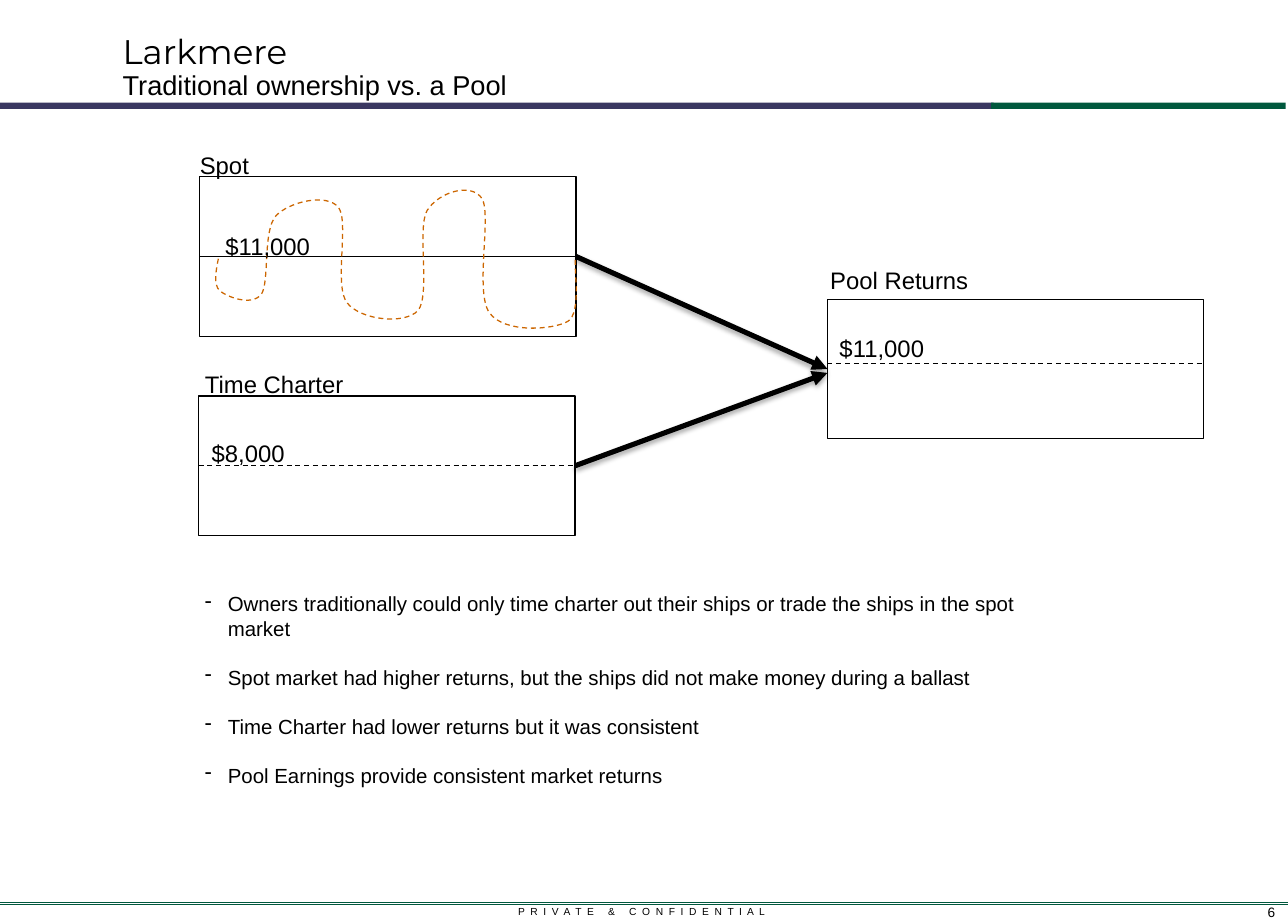
"""Build the slide that compares spot and time charter ownership with a pool."""
from dataclasses import dataclass, field
from itertools import chain

from lxml.etree import SubElement
from pptx import Presentation
from pptx.dml.color import RGBColor
from pptx.enum.dml import MSO_LINE_DASH_STYLE
from pptx.enum.shapes import MSO_CONNECTOR, MSO_SHAPE
from pptx.enum.text import MSO_ANCHOR, PP_ALIGN
from pptx.oxml.ns import qn
from pptx.util import Pt

BLACK, GREEN, NAVY, ORANGE = "000000", "00583D", "3A3761", "CC6600"
LEFT, RIGHT = 1, 3
PANEL_WIDTH = 221


@dataclass
class Run:
    text: str
    size: float
    font: str = "Arial"
    spacing: int = 0
    breaks: bool = False


@dataclass
class TextBox:
    left: float
    top: float
    width: float
    height: float
    lines: list[list[Run]]
    frame: dict = field(default_factory=dict)
    paragraph: dict = field(default_factory=dict)
    bullet: str = ""


@dataclass
class Panel:
    left: float
    top: float
    height: float


@dataclass
class Line:
    start: tuple[float, float]
    end: tuple[float, float]
    color: str = BLACK
    width: float = 0.75
    dashed: bool = False
    arrow: bool = False


def label(left: float, top: float, text: str) -> TextBox:
    """Describe a 14 point label."""
    return TextBox(left, top, 124.6, 24.5, [[Run(text, 14)]])


NO_MARGINS = dict.fromkeys(("margin_left", "margin_top", "margin_right", "margin_bottom"), 0)
BULLETS = (
    "Owners traditionally could only time charter out their ships or trade the ships in the spot market",
    "Spot market had higher returns, but the ships did not make money during a ballast",
    "Time Charter had lower returns but it was consistent",
    "Pool Earnings provide consistent market returns",
)
TEXT_BOXES = (
    TextBox(72, 20.7, 653.8, 59.8,
            [[Run("Larkmere", 20, "Montserrat", breaks=True), Run("Traditional ownership vs. a Pool", 16)]],
            NO_MARGINS, {"line_spacing": 0.9}),
    TextBox(296.2, 527.8, 160.6, 14.4,
            [[Run("P R I V A T E", 6, spacing=83), Run(" ", 6, spacing=583), Run("&", 6, spacing=83),
              Run(" ", 6, spacing=583), Run("C O N F I D E N T I A L", 6, spacing=83)]],
            {"word_wrap": False}, {"alignment": PP_ALIGN.CENTER}),
    TextBox(713.2, 520.6, 35.3, 19.4, [[Run("6", 8)]],
            NO_MARGINS | {"vertical_anchor": MSO_ANCHOR.BOTTOM}, {"alignment": PP_ALIGN.RIGHT}),
    label(125.3, 132.5, "$11,000"),
    label(117.2, 254.2, "$8,000"),
    label(485.7, 192.2, "$11,000"),
    label(110.2, 85, "Spot"),
    label(113.2, 213.5, "Time Charter"),
    label(480.2, 152.3, "Pool Returns"),
    TextBox(113.2, 343.4, 496.8, 152.6, [[Run(text, 12)] for text in BULLETS],
            paragraph={"space_before": Pt(14.4)}, bullet="-"),
)
BANDS = ((0, 583.2, NAVY), (581.8, 172.8, GREEN))
RATE_FRAME = {"left": Pt(126.7), "top": Pt(111.6), "width": Pt(211.7), "height": Pt(80.6)}
RATE_START = (128.2, 151.9)
RATE_CURVES = (
    ((126.7, 159.1), (125.3, 167), (128.9, 170.6)),
    ((133.2, 174.2), (147.6, 180), (153.4, 172.8)),
    ((158.4, 165.6), (154.1, 135.4), (162, 126.7)),
    ((169.2, 118.8), (191.5, 113), (198.7, 121.7)),
    ((205.2, 130.3), (195.8, 167.8), (203.8, 177.8)),
    ((211.7, 187.9), (237.6, 190.8), (245.5, 182.2)),
    ((252.7, 172.8), (244.8, 134.6), (250.6, 123.8)),
    ((257, 113), (276.5, 106.6), (283, 116.6)),
    ((288.7, 126.7), (278.6, 171.4), (287.3, 183.6)),
    ((295.9, 195.8), (324.7, 193.7), (333.4, 188.6)),
    ((341.3, 183.6), (337, 158.4), (337.7, 152.6)),
)


def rgb(color: str) -> RGBColor:
    """Turn a hex string into a colour."""
    return RGBColor.from_string(color)


def apply(target, values: dict) -> None:
    """Set each named attribute on the target."""
    for name, value in values.items():
        setattr(target, name, value)


def style_line(line, color: str, width: float, dashed: bool = False) -> None:
    """Set the colour, width and dash of a line."""
    line.color.rgb = rgb(color)
    line.width = Pt(width)
    if dashed:
        line.dash_style = MSO_LINE_DASH_STYLE.DASH


def add_text(slide, box: TextBox) -> None:
    """Add a text box with its paragraphs and runs."""
    shape = slide.shapes.add_textbox(*map(Pt, (box.left, box.top, box.width, box.height)))
    frame = shape.text_frame
    apply(frame, {"word_wrap": True} | box.frame)
    for index, runs in enumerate(box.lines):
        paragraph = frame.add_paragraph() if index else frame.paragraphs[0]
        if box.bullet:
            properties = paragraph._p.get_or_add_pPr()
            properties.attrib.update({"marL": str(Pt(13.5)), "indent": str(-Pt(13.5))})
            SubElement(properties, qn("a:buChar"), char=box.bullet)
        apply(paragraph, box.paragraph)
        if not index:
            paragraph.space_before = Pt(0)
        for part in runs:
            run = paragraph.add_run()
            run.text = part.text
            apply(run.font, {"name": part.font, "size": Pt(part.size)})
            run.font.color.rgb = rgb(BLACK)
            if part.spacing:
                run._r.get_or_add_rPr().set("spc", str(part.spacing))
            if part.breaks:
                paragraph.add_line_break()


def add_rectangle(slide, left: float, top: float, width: float, height: float, fill: str = ""):
    """Add a filled band or an outlined panel."""
    shape = slide.shapes.add_shape(MSO_SHAPE.RECTANGLE, *map(Pt, (left, top, width, height)))
    shape.shadow.inherit = False
    if fill:
        shape.fill.solid()
        shape.fill.fore_color.rgb = rgb(fill)
        shape.line.fill.background()
    else:
        shape.fill.background()
        style_line(shape.line, BLACK, 0.75)
    return shape


def add_line(slide, line: Line):
    """Add a straight line, or an arrow with a soft shadow."""
    connector = slide.shapes.add_connector(MSO_CONNECTOR.STRAIGHT, *map(Pt, chain(line.start, line.end)))
    style_line(connector.line, line.color, line.width, line.dashed)
    effects = SubElement(connector._element.spPr, qn("a:effectLst"))
    if line.arrow:
        SubElement(connector.line._get_or_add_ln(), qn("a:tailEnd"), type="triangle")
        shadow = SubElement(effects, qn("a:outerShdw"), blurRad=str(Pt(3.1)), dist=str(Pt(1.8)),
                            dir="5400000", rotWithShape="0")
        color = SubElement(shadow, qn("a:srgbClr"), val=BLACK)
        SubElement(color, qn("a:alpha"), val="35000")
    return connector


def add_rate_curve(slide) -> None:
    """Draw the swinging spot rate as a dashed curve."""
    builder = slide.shapes.build_freeform(*map(Pt, RATE_START))
    builder.add_line_segments([tuple(map(Pt, curve[-1])) for curve in RATE_CURVES], close=False)
    shape = builder.convert_to_shape()
    apply(shape, RATE_FRAME)
    outline = next(shape._element.iter(qn("a:path")))
    outline.attrib.update({"w": str(shape.width), "h": str(shape.height)})
    for command in list(outline):
        outline.remove(command)
    for name, points in (("a:moveTo", (RATE_START,)), *(("a:cubicBezTo", curve) for curve in RATE_CURVES)):
        command = SubElement(outline, qn(name))
        for x, y in points:
            SubElement(command, qn("a:pt"), x=str(Pt(x) - shape.left), y=str(Pt(y) - shape.top))
    shape.shadow.inherit = False
    shape.fill.background()
    style_line(shape.line, ORANGE, 0.75, True)


def main() -> None:
    """Build and save the presentation."""
    presentation = Presentation()
    apply(presentation, {"slide_width": Pt(756), "slide_height": Pt(540)})
    slide = presentation.slides.add_slide(presentation.slide_layouts[6])
    for left, width, color in BANDS:
        add_rectangle(slide, left, 60.3, width, 3.6, color)
    for height in (529.9, 530.9):
        add_line(slide, Line((0, height), (756, height), GREEN))
    spot, charter, pool = (
        add_rectangle(slide, panel.left, panel.top, PANEL_WIDTH, panel.height)
        for panel in (Panel(117.2, 103.8, 93.6), Panel(116.6, 232.4, 82), Panel(485.7, 175.6, 82)))
    for panel, dashed in ((spot, False), (charter, True)):
        average = add_line(slide, Line((117.2, 150), (338.2, 150), dashed=dashed))
        average.begin_connect(panel, LEFT)
        average.end_connect(panel, RIGHT)
    add_line(slide, Line((485.7, 213.3), (706.7, 213.3), dashed=True))
    add_rate_curve(slide)
    for box in TEXT_BOXES:
        add_text(slide, box)
    spot_arrow = add_line(slide, Line((338.2, 150.6), (485.7, 216.6), width=3, arrow=True))
    spot_arrow.begin_connect(spot, RIGHT)
    spot_arrow.end_connect(pool, LEFT)
    charter_arrow = add_line(slide, Line((337.6, 273.4), (485.7, 218.9), width=3, arrow=True))
    charter_arrow.begin_connect(charter, RIGHT)
    presentation.save("out.pptx")


if __name__ == "__main__":
    main()
